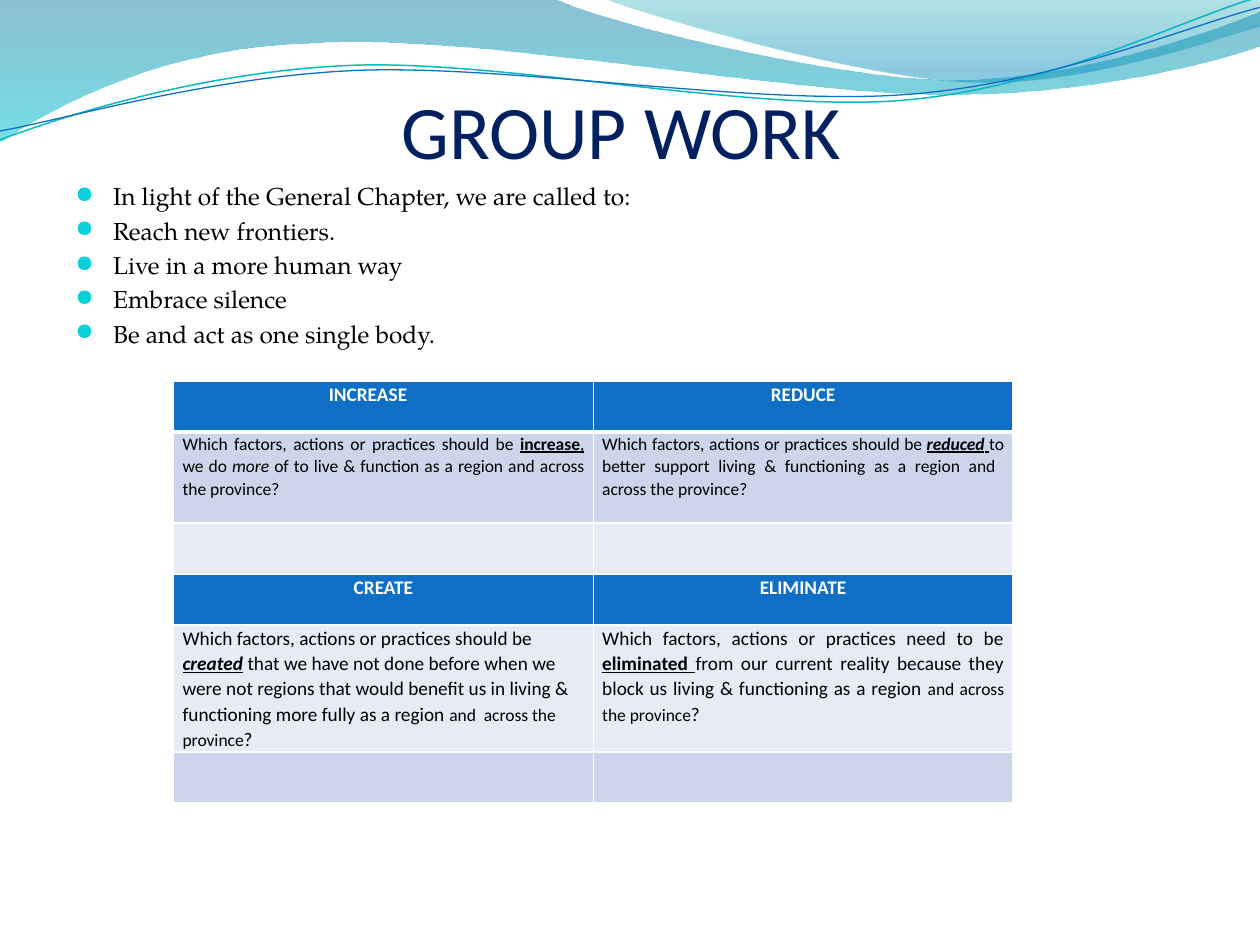
from lxml import etree
from pptx import Presentation
from pptx.dml.color import RGBColor
from pptx.enum.text import MSO_ANCHOR, PP_ALIGN
from pptx.oxml.ns import qn
from pptx.util import Cm, Pt

CENTER, JUSTIFY, LEFT = PP_ALIGN.CENTER, PP_ALIGN.JUSTIFY, PP_ALIGN.LEFT
BOTTOM = MSO_ANCHOR.BOTTOM
COLORS = {
    "navy": "002060", "black": "000000", "white": "FFFFFF", "bullet": "0BD0D9",
    "header": "0F6FC6", "band": "CCD5EA", "pale": "E7EBF5",
    "deep": "0074A1", "cyan": "00C6CF", "teal": "00A1A9", "sky": "008BBF",
    "teal_line": "0AB8BF", "blue_line": "0F6FC6",
}
RGB = {name: RGBColor.from_string(value) for name, value in COLORS.items()}


def add_curve(start, segments, close):
    points = [(Cm(x), Cm(y)) for seg in segments for x, y in zip(seg[::2], seg[1::2])]
    fb = slide.shapes.build_freeform(Cm(start[0]), Cm(start[1]))
    fb.add_line_segments(points, close=close)
    sp = fb.convert_to_shape()
    sp.shadow.inherit = False
    corners = iter(list(sp._element.iter(qn("a:lnTo"))))
    for seg in segments:
        first = next(corners)
        if len(seg) == 6:
            first.tag = qn("a:cubicBezTo")
            for corner in (next(corners), next(corners)):
                first.append(corner[0])
                corner.getparent().remove(corner)
    return sp


def add_run(p, text, font, size, color, **formats):
    r = p.add_run()
    r.text = text
    r.font.color.rgb = RGB[color]
    for key, value in {"name": font, "size": Pt(size), **formats}.items():
        setattr(r.font, key, value)


prs = Presentation()
prs.slide_width, prs.slide_height = Cm(25.4), Cm(19.05)
slide = prs.slides.add_slide(prs.slide_layouts[6])

waves = [
    ((0, 0), [(11.18, -0.03), (12.09, 0.43, 16.87, 1.6, 19.25, 1.6),
              (21.67, 1.6, 24.33, 0.66, 25.4, 0.23), (25.43, 0.91),
              (24.97, 1.12, 22.1, 1.93, 18.95, 1.91),
              (15.8, 1.88, 9.7, 0.71, 6.53, 0.86),
              (3.28, 0.91, 1.17, 2.11, -0.03, 2.87)],
     [(0, "deep", 45), (1, "cyan", 55)]),
    ((12.17, -0.03), [(12.93, 0.28, 17.32, 1.57, 19.53, 1.65),
                      (21.74, 1.75, 24.41, 0.81, 25.4, 0.53), (25.4, 0)],
     [(0, "teal", 30), (0.8, "sky", 45)]),
]
for start, segments, stops in waves:
    sp = add_curve(start, segments, True)
    sp.line.fill.background()
    sp.fill.gradient()
    sp.fill.gradient_angle = 270
    for stop, (position, color, opacity) in zip(sp.fill.gradient_stops, stops):
        stop.position = position
        stop.color.rgb = RGB[color]
    colors = sp._element.spPr.iter(qn("a:srgbClr"))
    for clr, (position, color, opacity) in zip(list(colors), stops):
        etree.SubElement(clr, qn("a:alpha"), val=str(opacity * 1000))

lines = [
    ((0, 2.82), [(1.22, 2.36, 4.01, 1.45, 7.04, 1.32), (10.03, 1.19, 15.06, 2.26, 18.11, 2.03),
                 (21.16, 1.8, 23.83, 0.38, 25.35, -0.05)], "teal_line", 0.85),
    ((0, 2.64), [(1.19, 2.44, 4.17, 1.55, 7.19, 1.42), (10.24, 1.3, 15.16, 2.13, 18.21, 1.91),
                 (21.23, 1.7, 23.9, 0.53, 25.4, 0.15)], "blue_line", 0.75),
]
for start, segments, color, width in lines:
    sp = add_curve(start, segments, False)
    sp.fill.background()
    sp.line.color.rgb = RGB[color]
    sp.line.width = Pt(width)

tf = slide.shapes.add_textbox(Cm(1.27), Cm(1.96), Cm(22.86), Cm(1.57)).text_frame
for key, value in {"word_wrap": True, "vertical_anchor": BOTTOM, "margin_left": 0,
                   "margin_right": Cm(0.35), "margin_bottom": 0}.items():
    setattr(tf, key, value)
p = tf.paragraphs[0]
p.alignment = CENTER
add_run(p, "GROUP WORK", "Calibri", 43.2, "navy")

tf = slide.shapes.add_textbox(Cm(1.27), Cm(3.53), Cm(22.86), Cm(13.49)).text_frame
tf.word_wrap = True
calls = ["In light of the General Chapter, we are called to:", "Reach new frontiers.",
         "Live in a more human way", "Embrace silence", "Be and act as one single body."]
for i, text in enumerate(calls):
    p = tf.add_paragraph() if i else tf.paragraphs[0]
    p.space_before = Pt(2.8)
    add_run(p, text, "TeX Gyre Pagella", 14, "black")
    pPr = p._p.get_or_add_pPr()
    pPr.set("marL", str(Cm(0.76)))
    pPr.set("indent", str(-Cm(0.76)))
    buClr = etree.SubElement(pPr, qn("a:buClr"))
    etree.SubElement(buClr, qn("a:srgbClr"), val=COLORS["bullet"])
    etree.SubElement(pPr, qn("a:buSzPct"), val="95000")
    etree.SubElement(pPr, qn("a:buFont"), typeface="OpenSymbol")
    etree.SubElement(pPr, qn("a:buChar"), char="●")

BOLD_U = {"bold": True, "underline": True}
BOLD_IU = {**BOLD_U, "italic": True}
HEAD = {"bold": True}
rows = [
    (1.02, "header", [(CENTER, [("INCREASE", 11, HEAD)]), (CENTER, [("REDUCE", 11, HEAD)])]),
    (1.83, "band", [
        (JUSTIFY, [("Which factors, actions or practices should be ", 10, {}),
                   ("increase", 10, BOLD_U), (",", 10, {"underline": True}),
                   (" we do ", 10, {}), ("more", 10, {"italic": True}),
                   (" of to live & function as a region and across the province?", 10, {})]),
        (JUSTIFY, [("Which factors, actions or practices should be ", 10, {}),
                   ("reduced", 10, BOLD_IU), (" ", 10, BOLD_U),
                   ("to better support living & functioning as a region and  "
                    "across the province?", 10, {})])]),
    (1.03, "pale", []),
    (1.03, "header", [(CENTER, [("CREATE", 11, HEAD)]), (CENTER, [("ELIMINATE", 11, HEAD)])]),
    (2.56, "pale", [
        (LEFT, [("Which factors, actions or practices should be ", 11, {}),
                ("created", 11, BOLD_IU),
                (" that we have not done before when we were not regions that would benefit us "
                 "in living & functioning more fully as a region ", 11, {}),
                ("and  across the province", 10, {}), ("?", 11, {})]),
        (JUSTIFY, [("Which factors, actions or practices need to be ", 11, {}),
                   ("eliminated ", 11, BOLD_U),
                   ("from our current reality because they block us living & functioning "
                    "as a region ", 11, {}),
                   ("and across the province", 10, {}), ("?", 11, {})])]),
    (1.02, "band", []),
]
table = slide.shapes.add_table(len(rows), 2, Cm(3.5), Cm(7.69), Cm(16.92),
                               Cm(sum(row[0] for row in rows))).table
for column in table.columns:
    column.width = Cm(8.46)
for i, (height, fill, contents) in enumerate(rows):
    table.rows[i].height = Cm(height)
    for j in range(2):
        cell = table.cell(i, j)
        tcPr = cell._tc.get_or_add_tcPr()
        for side in ("L", "R", "T", "B"):
            thick = (i, side) in ((0, "B"), (1, "T"))
            ln = etree.SubElement(tcPr, qn("a:ln" + side), w=str(Pt(3 if thick else 1)))
            solid = etree.SubElement(ln, qn("a:solidFill"))
            etree.SubElement(solid, qn("a:srgbClr"), val=COLORS["white"])
        cell.fill.solid()
        cell.fill.fore_color.rgb = RGB[fill]
        if not contents:
            continue
        for key, value in {"margin_left": Cm(0.18), "margin_right": Cm(0.18),
                           "margin_top": 0, "margin_bottom": 0}.items():
            setattr(cell, key, value)
        p = cell.text_frame.paragraphs[0]
        p.alignment, runs = contents[j]
        p.line_spacing = 1.07
        for text, size, formats in runs:
            add_run(p, text, "Calibri", size, "white" if fill == "header" else "black",
                    **{"bold": False, **formats})
table.cell(0, 0).margin_right = Cm(0.8)

prs.save("out.pptx")
